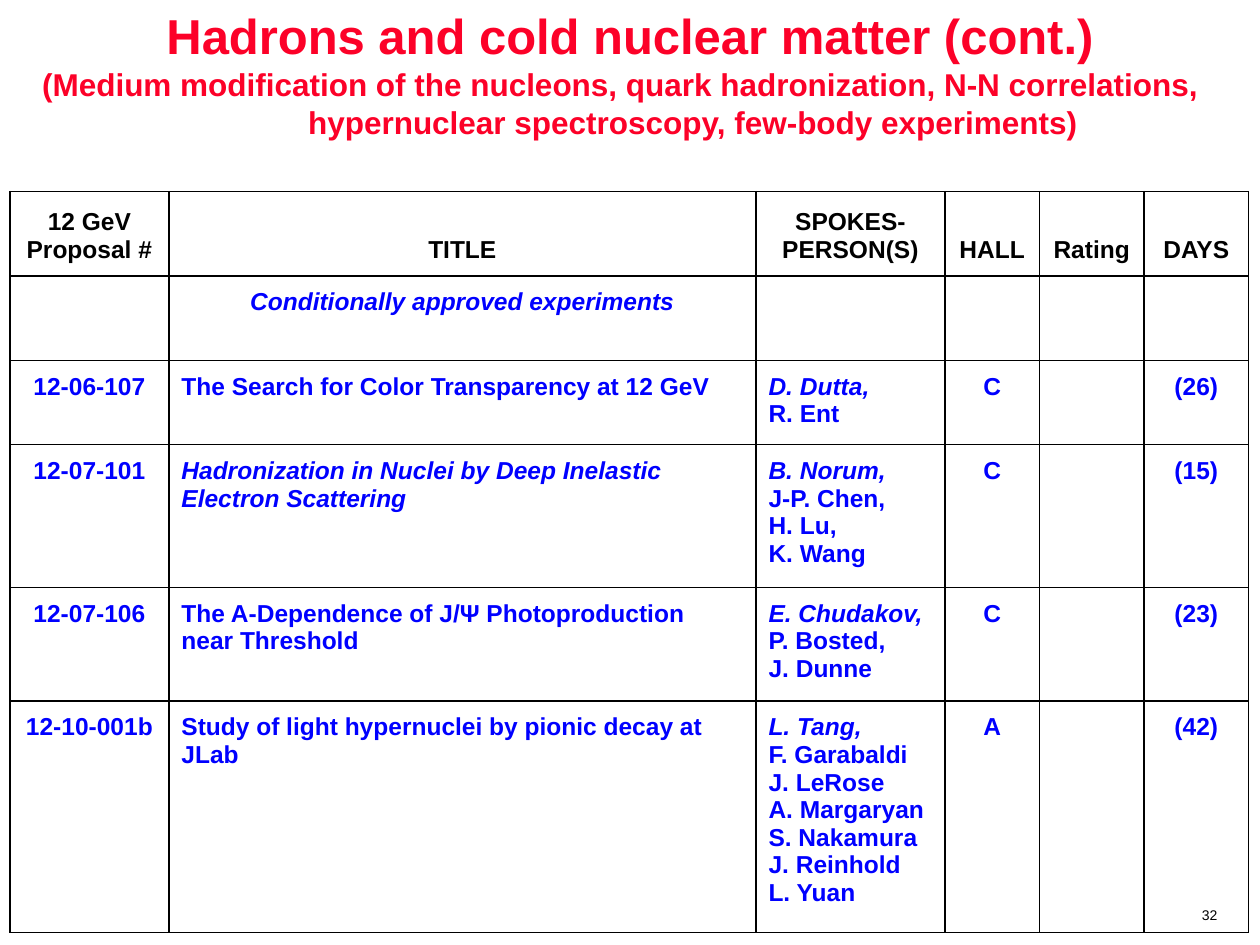
from lxml import etree
from pptx import Presentation
from pptx.dml.color import RGBColor
from pptx.enum.text import MSO_ANCHOR, PP_ALIGN
from pptx.oxml.ns import qn
from pptx.util import Emu, Inches, Pt

CENTER, LEFT = PP_ALIGN.CENTER, PP_ALIGN.LEFT
TOP, MIDDLE, BOTTOM = MSO_ANCHOR.TOP, MSO_ANCHOR.MIDDLE, MSO_ANCHOR.BOTTOM
RED = RGBColor(0xFC, 0x01, 0x28)
BLUE = RGBColor(0x00, 0x00, 0xFF)
BLACK = RGBColor(0x00, 0x00, 0x00)
FONT = "Arial"

# Text, size, left margin and right margin in inches
TITLE_LINES = [
    ("Hadrons and cold nuclear matter (cont.)", 28, 0, 0),
    ("(Medium modification of the nucleons, quark hadronization, N-N correlations,", 18, 0, 0.15),
    ("hypernuclear spectroscopy, few-body experiments)", 18, 1, 0),
]
PAGE_NUMBER = "32"

HEADERS = ["12 GeV Proposal #", "TITLE", "SPOKES-PERSON(S)", "HALL", "Rating", "DAYS"]
SECTION = "Conditionally approved experiments"
# Proposal, title, title in italics, spokespersons (contact first), hall, days
EXPERIMENTS = [
    ("12-06-107", "The Search for Color Transparency at 12 GeV", False,
     ["D. Dutta,", "R. Ent"], "C", "(26)"),
    ("12-07-101", "Hadronization in Nuclei by Deep Inelastic Electron Scattering", True,
     ["B. Norum,", "J-P. Chen,", "H. Lu,", "K. Wang"], "C", "(15)"),
    ("12-07-106", "The A-Dependence of J/Ψ Photoproduction near Threshold", False,
     ["E. Chudakov,", "P. Bosted,", "J. Dunne"], "C", "(23)"),
    ("12-10-001b", "Study of light hypernuclei by pionic decay at JLab", False,
     ["L. Tang,", "F. Garabaldi", "J. LeRose", "A. Margaryan", "S. Nakamura",
      "J. Reinhold", "L. Yuan"], "A", "(42)"),
]
COLUMN_WIDTHS = [1.26, 4.66, 1.5, 0.75, 0.83, 0.83]
ROW_HEIGHTS = [0.67, 0.67, 0.67, 1.13, 0.9, 1.83]
TABLE_LEFT, TABLE_TOP = 0.08, 1.52


def style(para, size, color, bold=True, italic=False, align=CENTER):
    para.alignment = align
    for span in para.runs:
        font = span.font
        font.name, font.size, font.bold, font.italic = FONT, Pt(size), bold, italic
        font.color.rgb = color


def add_box(page, left, top, width, height):
    box = page.shapes.add_textbox(Inches(left), Inches(top), Inches(width), Inches(height))
    box.text_frame.vertical_anchor = MIDDLE
    return box.text_frame


def add_title(page):
    frame = add_box(page, 0, 0.17, 10, 0.82)
    frame.word_wrap = True
    frame.text = "\n".join(line[0] for line in TITLE_LINES)
    for para, (_, size, left, right) in zip(frame.paragraphs, TITLE_LINES):
        style(para, size, RED)
        properties = para._p.get_or_add_pPr()
        properties.set("marL", str(Inches(left)))
        properties.set("marR", str(Inches(right)))


def add_page_number(page):
    frame = add_box(page, 9.43, 7.16, 0.34, 0.21)
    frame.margin_left = frame.margin_right = frame.margin_top = frame.margin_bottom = Emu(0)
    frame.text = PAGE_NUMBER
    style(frame.paragraphs[0], 8, BLACK, bold=False)


def add_borders(cell):
    properties = cell._tc.get_or_add_tcPr()
    for index, side in enumerate(("lnL", "lnR", "lnT", "lnB")):
        line = etree.Element(qn("a:" + side), w=str(Pt(1)))
        fill = etree.SubElement(line, qn("a:solidFill"))
        etree.SubElement(fill, qn("a:srgbClr"), val=str(BLACK))
        properties.insert(index, line)


def fill_cell(cell, lines, color=BLUE, align=CENTER, italic_lines=0):
    cell.text = "\n".join(lines)
    for index, para in enumerate(cell.text_frame.paragraphs):
        style(para, 14, color, italic=index < italic_lines, align=align)


def add_experiments(page):
    shape = page.shapes.add_table(
        len(ROW_HEIGHTS), len(COLUMN_WIDTHS), Inches(TABLE_LEFT), Inches(TABLE_TOP),
        Inches(sum(COLUMN_WIDTHS)), Inches(sum(ROW_HEIGHTS)))
    table = shape.table
    table.first_row = table.horz_banding = False
    for column, width in zip(table.columns, COLUMN_WIDTHS):
        column.width = Inches(width)
    for row, height in zip(table.rows, ROW_HEIGHTS):
        row.height = Inches(height)
    for cell in table.iter_cells():
        cell.margin_left = cell.margin_right = Inches(0.1)
        cell.margin_top = cell.margin_bottom = Inches(0.1)
        cell.vertical_anchor = TOP
        cell.fill.background()
        add_borders(cell)

    for column, header in enumerate(HEADERS):
        cell = table.cell(0, column)
        cell.vertical_anchor = BOTTOM
        fill_cell(cell, [header], BLACK)
    fill_cell(table.cell(1, 1), [SECTION], italic_lines=1)
    for row, experiment in enumerate(EXPERIMENTS, start=2):
        proposal, title, italic_title, people, hall, days = experiment
        fill_cell(table.cell(row, 0), [proposal])
        fill_cell(table.cell(row, 1), [title], align=LEFT, italic_lines=int(italic_title))
        fill_cell(table.cell(row, 2), people, align=LEFT, italic_lines=1)
        fill_cell(table.cell(row, 3), [hall])
        fill_cell(table.cell(row, 5), [days])


def main():
    deck = Presentation()
    deck.slide_width, deck.slide_height = Inches(10), Inches(7.5)
    page = deck.slides.add_slide(deck.slide_layouts[6])
    add_page_number(page)
    add_experiments(page)
    add_title(page)
    deck.save("out.pptx")


if __name__ == "__main__":
    main()
